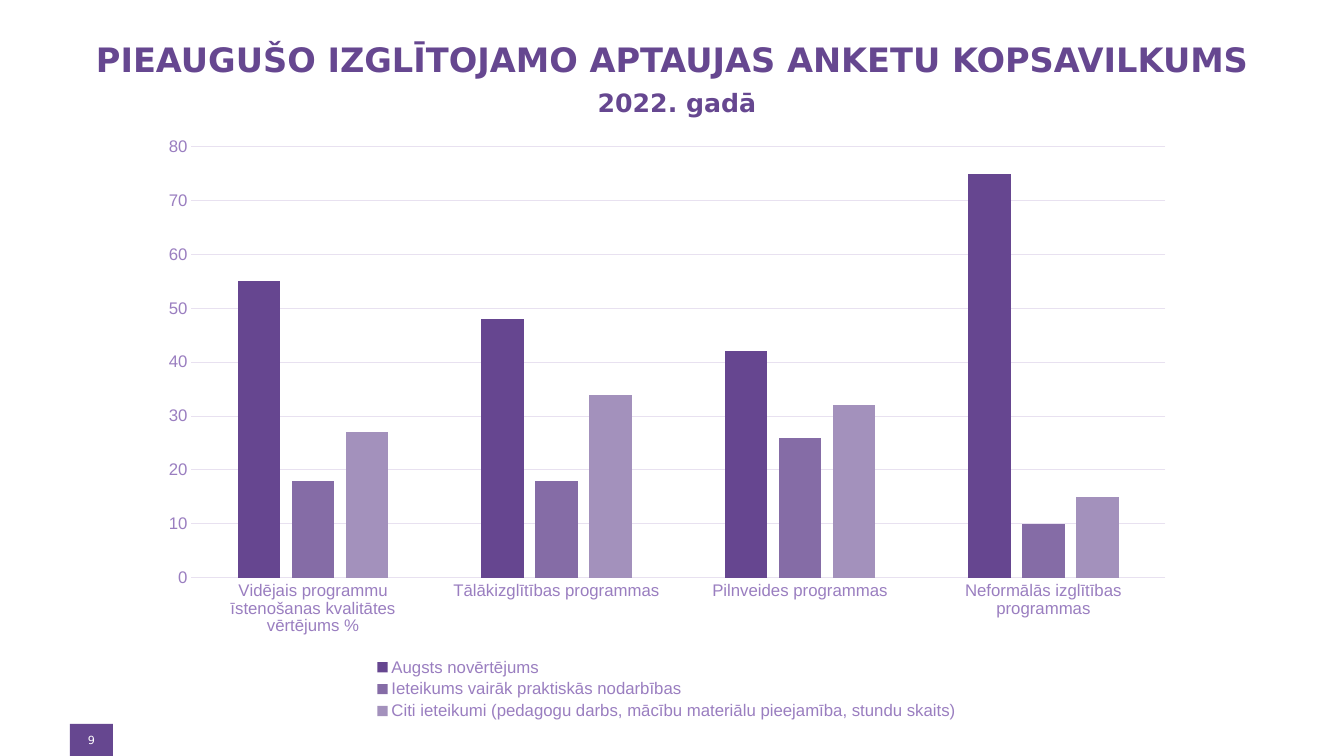
import pptx
import pptx.util
import pptx.chart.data
import pptx.dml.color
import pptx.enum.chart
import pptx.enum.shapes
import pptx.enum.text

EMU_PER_PX = 914400 / 100.8
SLIDE_SIZE = (1344, 756)
COLORS = {
    "purple": "664790",
    "high": "664690",
    "practice": "856CA6",
    "other": "A391BC",
    "label": "9A7EC0",
    "grid": "E8E1F0",
    "white": "FFFFFF",
}
TITLE_BOX = (70, 39, 1204, 80)
TITLE_LINES = [
    ("PIEAUGUŠO IZGLĪTOJAMO APTAUJAS ANKETU KOPSAVILKUMS", 24, 0, 0),
    ("2022. gadā", 18, 6, 10),
]
NUMBER_BOX = (70, 724, 43, 32)
PAGE_NUMBER = "9"
CHART_BOX = (148, 126, 1038, 598)
CATEGORIES = [
    "Vidējais programmu īstenošanas kvalitātes vērtējums %",
    "Tālākizglītības programmas",
    "Pilnveides programmas",
    "Neformālās izglītības programmas",
]
SERIES = [
    ("Augsts novērtējums", (55, 48, 42, 75), "high"),
    ("Ieteikums vairāk praktiskās nodarbības", (18, 18, 26, 10), "practice"),
    ("Citi ieteikumi (pedagogu darbs, mācību materiālu pieejamība, stundu skaits)",
     (27, 34, 32, 15), "other"),
]


def px(length):
    return pptx.util.Emu(round(length * EMU_PER_PX))


def box(lengths):
    return [px(length) for length in lengths]


def color(name):
    return pptx.dml.color.RGBColor.from_string(COLORS[name])


def apply(target, values):
    for name, value in values.items():
        setattr(target, name, value)


def style_font(font, face, size, color_name, bold=False):
    apply(font, {"name": face, "size": pptx.util.Pt(size), "bold": bold})
    font.color.rgb = color(color_name)


def style_line(line):
    line.color.rgb = color("grid")
    line.width = pptx.util.Pt(0.75)


def prepare_frame(frame, margin, anchor):
    apply(frame, {
        "word_wrap": True,
        "vertical_anchor": anchor,
        "margin_left": px(margin),
        "margin_right": px(margin),
        "margin_top": px(margin),
        "margin_bottom": px(margin),
    })


def add_line(paragraph, text, size, color_name, bold=False):
    paragraph.alignment = pptx.enum.text.PP_ALIGN.CENTER
    run = paragraph.add_run()
    run.text = text
    style_font(run.font, "DejaVu Sans", size, color_name, bold)


def add_title(slide):
    frame = slide.shapes.add_textbox(*box(TITLE_BOX)).text_frame
    prepare_frame(frame, 0, pptx.enum.text.MSO_ANCHOR.TOP)
    for index, (text, size, space, indent) in enumerate(TITLE_LINES):
        paragraph = frame.add_paragraph() if index else frame.paragraphs[0]
        paragraph.space_before = pptx.util.Pt(space)
        add_line(paragraph, text, size, "purple", True)
        if indent:
            properties = paragraph._p.get_or_add_pPr()
            properties.set("marL", str(px(indent)))
            properties.set("indent", "0")


def add_page_number(slide):
    shape = slide.shapes.add_shape(
        pptx.enum.shapes.MSO_SHAPE.RECTANGLE, *box(NUMBER_BOX))
    shape.shadow.inherit = False
    shape.fill.solid()
    shape.fill.fore_color.rgb = color("purple")
    shape.line.fill.background()
    prepare_frame(shape.text_frame, 4, pptx.enum.text.MSO_ANCHOR.MIDDLE)
    add_line(shape.text_frame.paragraphs[0], PAGE_NUMBER, 8, "white")


def add_survey_chart(slide):
    data = pptx.chart.data.CategoryChartData()
    data.categories = CATEGORIES
    for name, values, _ in SERIES:
        data.add_series(name, values)
    chart = slide.shapes.add_chart(
        pptx.enum.chart.XL_CHART_TYPE.COLUMN_CLUSTERED, *box(CHART_BOX), data).chart
    apply(chart, {"has_title": False, "has_legend": True})
    style_font(chart.font, "Arial", 10, "high")

    plot = chart.plots[0]
    apply(plot, {"gap_width": 219, "overlap": -27, "vary_by_categories": False})
    for series, (_, _, color_name) in zip(plot.series, SERIES):
        series.format.fill.solid()
        series.format.fill.fore_color.rgb = color(color_name)

    apply(chart.legend, {
        "position": pptx.enum.chart.XL_LEGEND_POSITION.BOTTOM,
        "include_in_layout": False,
    })
    style_font(chart.legend.font, "Arial", 12, "label")
    for axis in (chart.category_axis, chart.value_axis):
        apply(axis, {
            "major_tick_mark": pptx.enum.chart.XL_TICK_MARK.NONE,
            "minor_tick_mark": pptx.enum.chart.XL_TICK_MARK.NONE,
        })
        style_font(axis.tick_labels.font, "Arial", 12, "label")
    style_line(chart.category_axis.format.line)
    apply(chart.value_axis, {
        "minimum_scale": 0, "maximum_scale": 80, "major_unit": 10,
        "has_major_gridlines": True,
    })
    chart.value_axis.format.line.fill.background()
    style_line(chart.value_axis.major_gridlines.format.line)


def main():
    presentation = pptx.Presentation()
    width, height = box(SLIDE_SIZE)
    apply(presentation, {"slide_width": width, "slide_height": height})
    slide = presentation.slides.add_slide(presentation.slide_layouts[6])
    add_title(slide)
    add_page_number(slide)
    add_survey_chart(slide)
    presentation.save("out.pptx")


if __name__ == "__main__":
    main()
